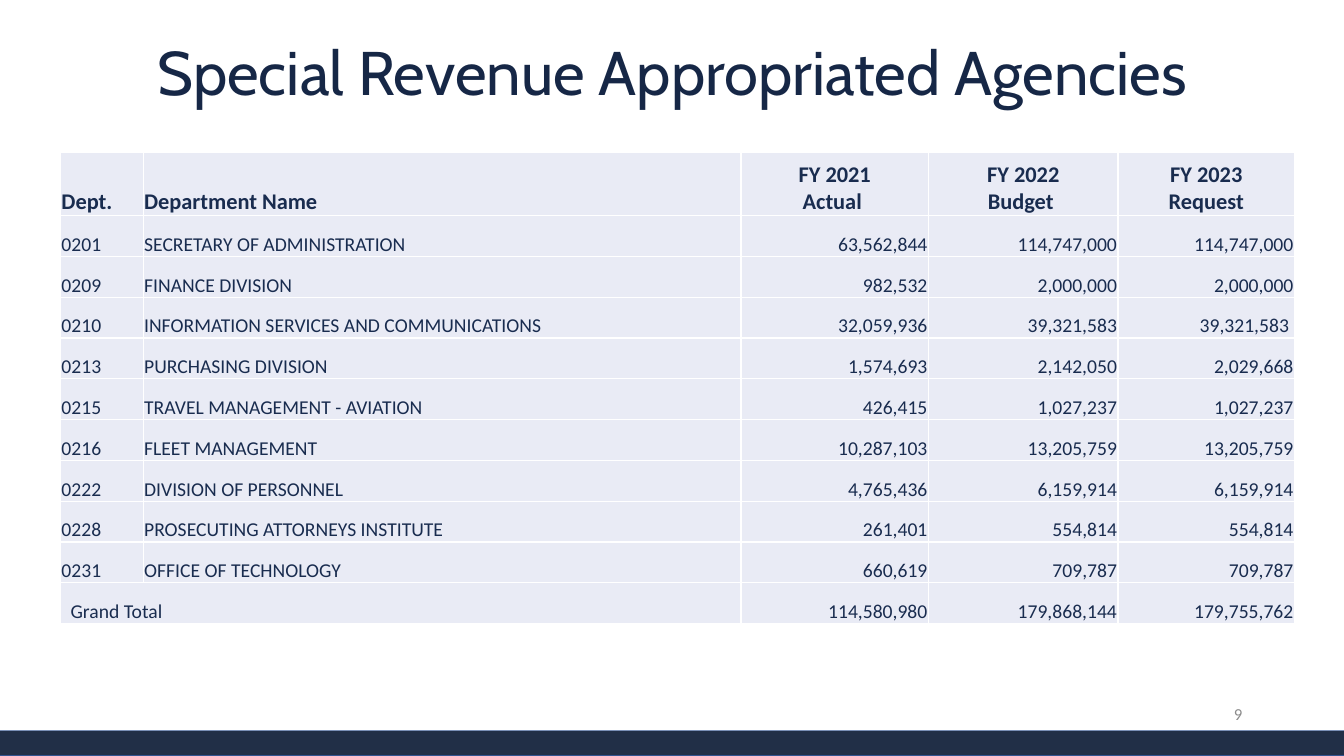
from typing import NamedTuple, Optional

from lxml import etree
from pptx import Presentation
from pptx import util as u
from pptx.dml.color import RGBColor
from pptx.enum import shapes, text
from pptx.oxml import ns

NAVY_TITLE = RGBColor(0x16, 0x27, 0x46)
NAVY_TEXT = RGBColor(0x19, 0x2C, 0x4F)
NAVY_BAR = RGBColor(0x21, 0x2F, 0x47)
BLUE_EDGE = RGBColor(0x32, 0x54, 0x91)
PALE_BLUE = RGBColor(0xE9, 0xEB, 0xF5)
GREY = RGBColor(0x8C, 0x8C, 0x8C)
WHITE = RGBColor(0xFF, 0xFF, 0xFF)

LEFT, CENTER, RIGHT = text.PP_ALIGN.LEFT, text.PP_ALIGN.CENTER, text.PP_ALIGN.RIGHT


class FooterBar(NamedTuple):
    left: float
    top: float
    thickness: float
    fill: RGBColor
    edge: Optional[RGBColor]


class Column(NamedTuple):
    width: float
    heading: tuple[str, ...]
    heading_align: text.PP_ALIGN
    body_align: text.PP_ALIGN


class Department(NamedTuple):
    code: str
    name: str
    actual: str
    budget: str
    request: str


FOOTER_LENGTH = 13.34
FOOTER_BARS = [
    FooterBar(6.54, 0.7, 0.25, NAVY_BAR, BLUE_EDGE),
    FooterBar(6.64, 0.55, 0.05, WHITE, None),
]
COLUMNS = [
    Column(0.82, ("Dept.",), LEFT, LEFT),
    Column(5.93, ("Department Name",), LEFT, LEFT),
    Column(1.86, (" FY 2021 ", "Actual "), CENTER, RIGHT),
    Column(1.88, ("FY 2022", "Budget "), CENTER, RIGHT),
    Column(1.75, ("FY 2023", "Request"), CENTER, RIGHT),
]
DEPARTMENTS = [
    Department("0201", "SECRETARY OF ADMINISTRATION", "63,562,844", "114,747,000", "114,747,000"),
    Department("0209", "FINANCE DIVISION", "982,532", "2,000,000", "2,000,000"),
    Department("0210", "INFORMATION SERVICES AND COMMUNICATIONS",
               "32,059,936", "39,321,583", "39,321,583 "),
    Department("0213", "PURCHASING DIVISION", "1,574,693", "2,142,050", "2,029,668"),
    Department("0215", "TRAVEL MANAGEMENT - AVIATION", "426,415", "1,027,237", "1,027,237"),
    Department("0216", "FLEET MANAGEMENT", "10,287,103", "13,205,759", "13,205,759"),
    Department("0222", "DIVISION OF PERSONNEL", "4,765,436", "6,159,914", "6,159,914"),
    Department("0228", "PROSECUTING ATTORNEYS INSTITUTE", "261,401", "554,814", "554,814"),
    Department("0231", "OFFICE OF TECHNOLOGY", "660,619", "709,787", "709,787"),
]
GRAND_TOTAL = Department("Grand Total", "", "114,580,980", "179,868,144", "179,755,762")
TABLE_WIDTH, TABLE_HEIGHT, HEADING_HEIGHT = 12.24, 4.68, 0.63


def add_run(paragraph, wording: str, size: float, color: RGBColor,
            font: str = "Calibri", bold: bool = False) -> None:
    run = paragraph.add_run()
    run.text = wording
    run.font.name = font
    run.font.size = u.Pt(size)
    run.font.bold = bold
    run.font.color.rgb = color


def draw_footer_bar(slide, bar: FooterBar) -> None:
    strip = slide.shapes.add_shape(
        shapes.MSO_SHAPE.RECTANGLE, u.Inches(bar.left), u.Inches(bar.top),
        u.Inches(bar.thickness), u.Inches(FOOTER_LENGTH))
    strip.rotation = 270
    strip.shadow.inherit = False
    strip.fill.solid()
    strip.fill.fore_color.rgb = bar.fill
    if bar.edge is None:
        strip.line.fill.background()
    else:
        strip.line.color.rgb = bar.edge
        strip.line.width = u.Pt(1)


def add_borders(cell) -> None:
    properties = cell._tc.get_or_add_tcPr()
    for position, side in enumerate(("lnL", "lnR", "lnT", "lnB")):
        border = etree.Element(ns.qn(f"a:{side}"), w=str(u.Pt(1)))
        fill = etree.SubElement(border, ns.qn("a:solidFill"))
        etree.SubElement(fill, ns.qn("a:srgbClr"), val=str(WHITE))
        properties.insert(position, border)


def fill_cell(cell, lines: tuple[str, ...], align: text.PP_ALIGN,
              size: float, bold: bool = False) -> None:
    cell.fill.solid()
    cell.fill.fore_color.rgb = PALE_BLUE
    add_borders(cell)
    cell.vertical_anchor = text.MSO_ANCHOR.BOTTOM
    cell.margin_left = cell.margin_right = cell.margin_top = u.Inches(0.01)
    cell.margin_bottom = 0
    for index, line in enumerate(lines):
        frame = cell.text_frame
        paragraph = frame.add_paragraph() if index else frame.paragraphs[0]
        paragraph.alignment = align
        if line:
            add_run(paragraph, line, size, NAVY_TEXT, bold=bold)


def draw_agency_table(slide) -> None:
    records = [*DEPARTMENTS, GRAND_TOTAL]
    agencies = slide.shapes.add_table(
        len(records) + 1, len(COLUMNS), u.Inches(0.6), u.Inches(1.51),
        u.Inches(TABLE_WIDTH), u.Inches(TABLE_HEIGHT)).table
    agencies.horz_banding = False
    for row in agencies.rows:
        row.height = u.Inches((TABLE_HEIGHT - HEADING_HEIGHT) / len(records))
    agencies.rows[0].height = u.Inches(HEADING_HEIGHT)

    for c, column in enumerate(COLUMNS):
        agencies.columns[c].width = u.Inches(column.width)
        fill_cell(agencies.cell(0, c), column.heading, column.heading_align, 16, bold=True)
        for r, record in enumerate(records, start=1):
            fill_cell(agencies.cell(r, c), (record[c],), column.body_align, 14)

    # The total's label spans the code and name columns
    total_label = agencies.cell(len(records), 0)
    total_label.merge(agencies.cell(len(records), 1))
    total_label.margin_left = u.Inches(0.1)


def main() -> None:
    deck = Presentation()
    deck.slide_width, deck.slide_height = u.Inches(13.33), u.Inches(7.5)
    slide = deck.slides.add_slide(deck.slide_layouts[5])

    # Title
    title = slide.shapes.title
    title.left, title.top = u.Inches(0.92), u.Inches(0.12)
    title.width, title.height = u.Inches(11.5), u.Inches(1.25)
    title.text_frame.auto_size = text.MSO_AUTO_SIZE.NONE
    title.text_frame.vertical_anchor = text.MSO_ANCHOR.MIDDLE
    heading = title.text_frame.paragraphs[0]
    heading.alignment = CENTER
    heading.line_spacing = 0.9
    add_run(heading, "Special Revenue Appropriated Agencies", 44, NAVY_TITLE, font="Cabin")

    # Footer bars
    for bar in FOOTER_BARS:
        draw_footer_bar(slide, bar)

    # Agency table
    draw_agency_table(slide)

    # Page number
    page_number = slide.shapes.add_textbox(
        u.Inches(9.42), u.Inches(6.88), u.Inches(3), u.Inches(0.4)).text_frame
    page_number.word_wrap = True
    page_number.vertical_anchor = text.MSO_ANCHOR.MIDDLE
    page_number.paragraphs[0].alignment = RIGHT
    add_run(page_number.paragraphs[0], "9", 12, GREY)

    deck.save("out.pptx")


if __name__ == "__main__":
    main()
